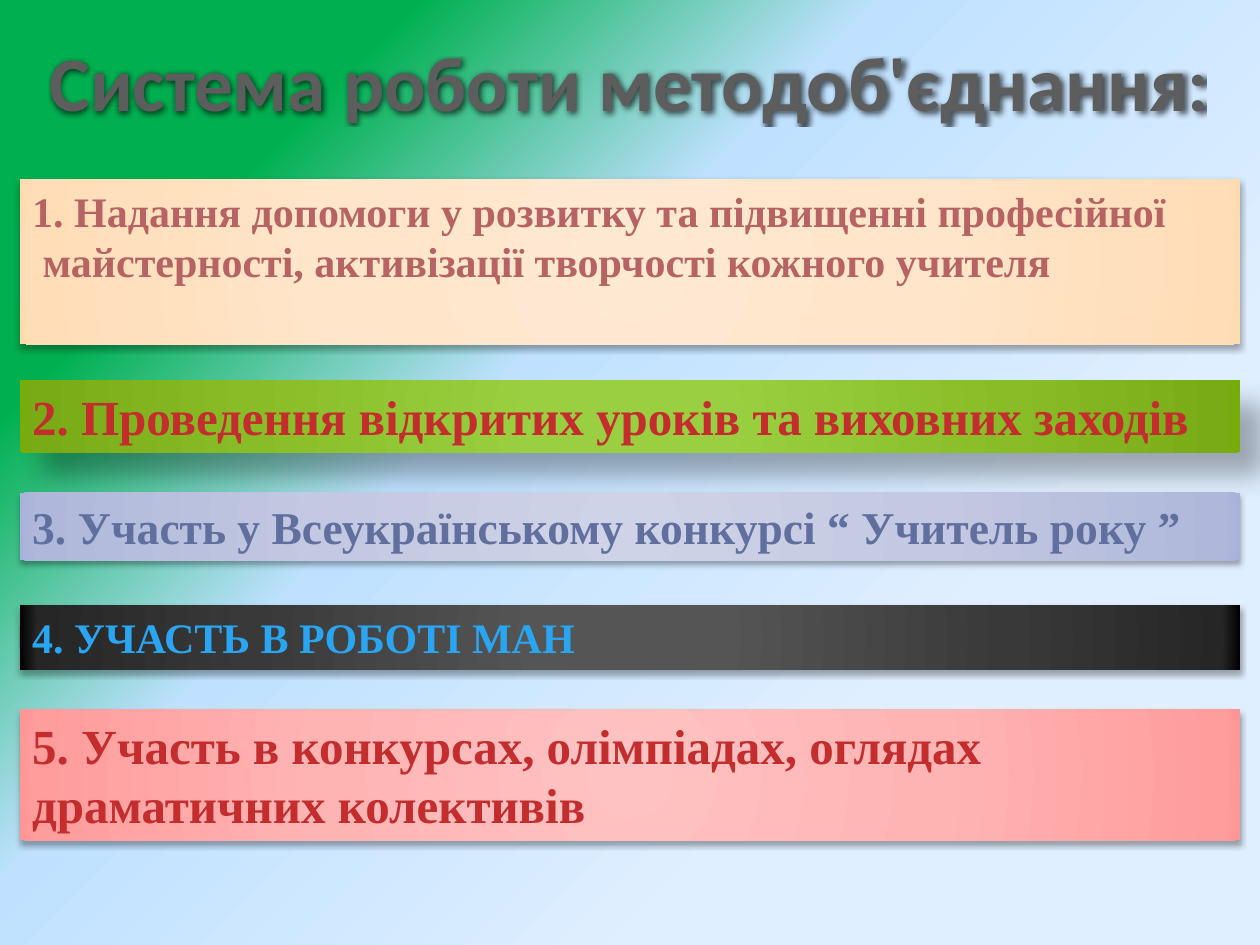
import pptx
import pptx.dml.color
import pptx.enum.shapes
import pptx.enum.text
import pptx.oxml
import pptx.oxml.ns
import pptx.util

Cm, Pt = pptx.util.Cm, pptx.util.Pt
qn = pptx.oxml.ns.qn
NAMESPACE = pptx.oxml.ns.nsdecls("a")

COLORS = {
    "title": "5D5D5D", "shade": "000000", "rose": "B76364",
    "red": "C32D2E", "slate": "606F9E", "sky": "2AA5F2",
}
BACKGROUND = [(0, "00B050"), (19, "00B050"), (40, "BFE1FF"), (72, "E0EFFF"), (100, "E0EFFF")]
LINEAR = '<a:lin ang="2700000" scaled="0"/>'
RADIAL = ('<a:path path="circle"><a:fillToRect l="50000" t="50000" '
          'r="50000" b="50000"/></a:path>')
SOFT_SHADOW = (32, 3.5, 2.2, 90)
LONG_SHADOW = (30, 15, 18, 45)

# top and height in cm, gradient, shadow, text size, text colour, lines
BARS = [
    (3.61, 3.33, [(0, "FFE9D3"), (50, "FFE5C9"), (97, "FFDDB7"), (100, "FFDBB2")],
     SOFT_SHADOW, 24, "rose",
     ["1. Надання допомоги у розвитку та підвищенні професійної",
      " майстерності, активізації творчості кожного учителя"]),
    (7.67, 1.45, [(0, "9AD041"), (15, "9ACF41"), (62, "88BD27"), (97, "79AB17"),
                  (100, "77AC08")],
     LONG_SHADOW, 28, "red", ["2. Проведення відкритих уроків та виховних заходів"]),
    (9.93, 1.37, [(0, "CFD3E7"), (50, "C3C9E2"), (97, "AFB8DA"), (100, "A8B2DA")],
     SOFT_SHADOW, 26, "slate", ["3. Участь у Всеукраїнському конкурсі “ Учитель року ”"]),
    (12.2, 1.3, [(0, "555555"), (15, "555555"), (62, "393939"), (97, "262626"),
                 (100, "000000")],
     SOFT_SHADOW, 24, "sky", ["4. УЧАСТЬ В РОБОТІ МАН"]),
    (14.3, 2.64, [(0, "FFC2C2"), (50, "FFB4B4"), (97, "FF9C9C"), (100, "FF9595")],
     SOFT_SHADOW, 28, "red",
     ["5. Участь в конкурсах, олімпіадах, оглядах драматичних колективів"]),
]


def set_gradient(fill, parent, stops, direction):
    """Give parent a gradient fill, in the place of its solid one."""
    fill.solid()
    marks = "".join(f'<a:gs pos="{position * 1000}"><a:srgbClr val="{color}"/></a:gs>'
                    for position, color in stops)
    gradient = pptx.oxml.parse_xml(
        f'<a:gradFill {NAMESPACE} rotWithShape="1"><a:gsLst>{marks}</a:gsLst>'
        f'{direction}</a:gradFill>')
    parent.replace(parent.find(qn("a:solidFill")), gradient)


def set_shadow(shape, alpha, blur, distance, angle):
    shape.shadow.inherit = False
    effects = shape.element.spPr.find(qn("a:effectLst"))
    effects.append(pptx.oxml.parse_xml(
        f'<a:outerShdw {NAMESPACE} blurRad="{Pt(blur)}" dist="{Pt(distance)}" '
        f'dir="{angle * 60000}" algn="tl" rotWithShape="0">'
        f'<a:srgbClr val="{COLORS["shade"]}"><a:alpha val="{alpha * 1000}"/>'
        f'</a:srgbClr></a:outerShdw>'))


def write_lines(frame, lines, size, color, name, align):
    frame.word_wrap = True
    frame.vertical_anchor = pptx.enum.text.MSO_ANCHOR.TOP
    frame.text = "\n".join(lines)
    for para in frame.paragraphs:
        para.alignment = align
        para.font.size = Pt(size)
        para.font.bold = True
        para.font.name = name
        para.font.color.rgb = pptx.dml.color.RGBColor.from_string(COLORS[color])


def add_title(page, left, top, width, height):
    box = page.shapes.add_textbox(left, top, width, height)
    write_lines(box.text_frame, ["Система роботи методоб'єднання:"], 44, "title",
                "Calibri", pptx.enum.text.PP_ALIGN.CENTER)
    span = box.text_frame.paragraphs[0].runs[0]
    glow = pptx.oxml.parse_xml(
        f'<a:effectLst {NAMESPACE}><a:glow rad="{Pt(3)}">'
        f'<a:srgbClr val="{COLORS["shade"]}"><a:alpha val="65000"/></a:srgbClr>'
        f'</a:glow></a:effectLst>')
    span.font._element.append(glow)


def add_bar(page, left, top, width, height, stops, shadow, size, color, lines):
    bar = page.shapes.add_shape(pptx.enum.shapes.MSO_SHAPE.RECTANGLE,
                                left, top, width, height)
    set_gradient(bar.fill, bar.element.spPr, stops, RADIAL)
    bar.line.fill.background()
    set_shadow(bar, *shadow)
    write_lines(bar.text_frame, lines, size, color, "Times New Roman",
                pptx.enum.text.PP_ALIGN.LEFT)


def main():
    deck = pptx.Presentation()
    deck.slide_width, deck.slide_height = Cm(25.4), Cm(19.05)
    page = deck.slides.add_slide(deck.slide_layouts[6])
    background = page.background.fill
    background.solid()
    set_gradient(background, page.element.find(f".//{qn('p:bgPr')}"), BACKGROUND, LINEAR)
    add_title(page, 0, Cm(0.58), deck.slide_width, Cm(2.14))
    for top, height, *style in BARS:
        add_bar(page, Cm(0.4), Cm(top), Cm(24.6), Cm(height), *style)
    deck.save("out.pptx")


if __name__ == "__main__":
    main()
